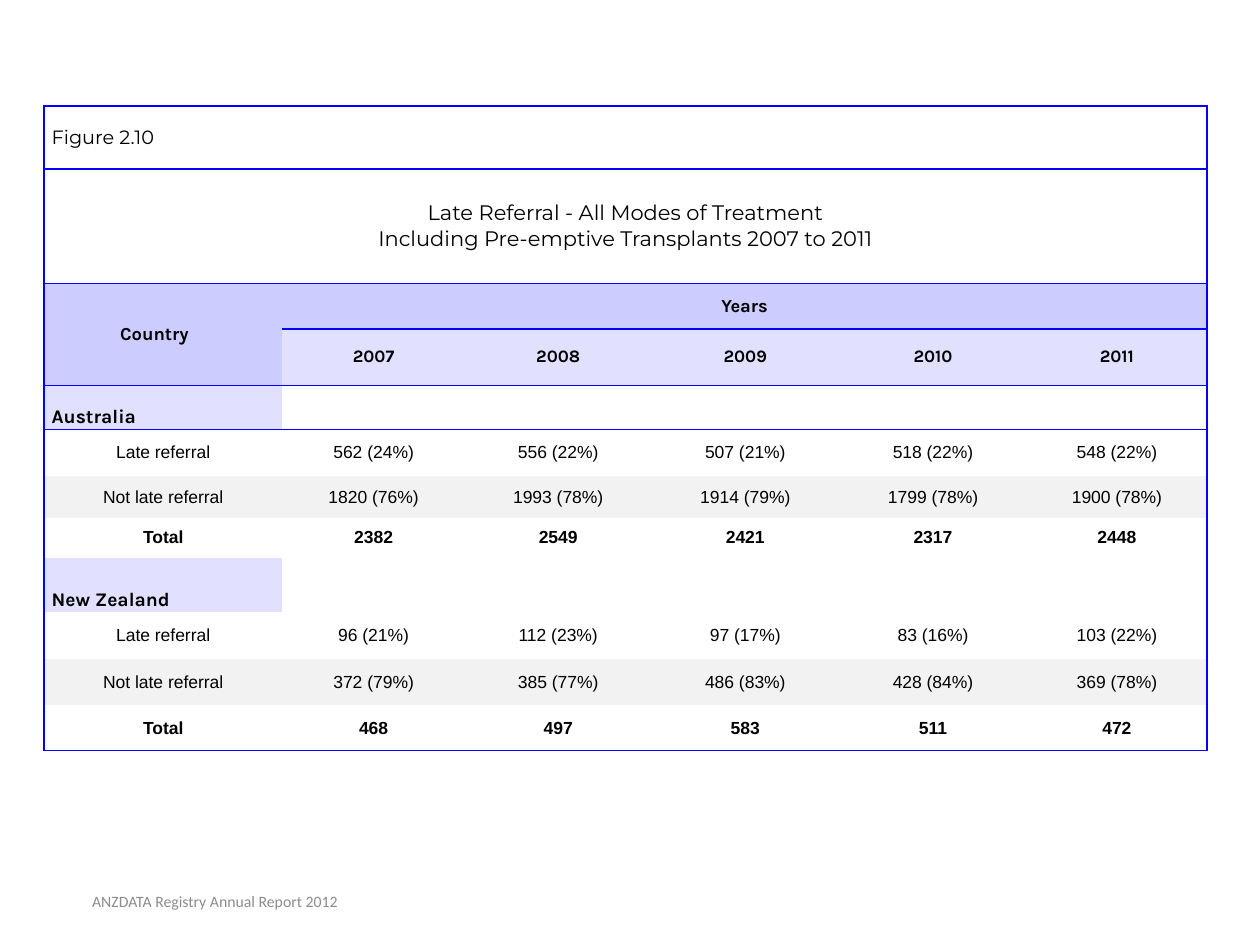
from lxml.etree import SubElement
from pptx import Presentation
from pptx.dml.color import RGBColor
from pptx.enum.text import MSO_ANCHOR as Anchor, PP_ALIGN as Align
from pptx.oxml.ns import qn
from pptx.util import Inches, Pt

COLORS = {
    "line": "0000FF", "text": "000000", "header": "CCCCFF",
    "subheader": "E1E1FF", "band": "F2F2F2", "footer": "8C8C8C",
}
COLUMN_WIDTHS = [1.89, 1.45, 1.48, 1.49, 1.49, 1.43]
ROW_HEIGHTS = [0.5, 0.91, 0.36, 0.45, 0.35, 0.37, 0.33, 0.32, 0.43, 0.37, 0.37, 0.36]
LAST_COLUMN, LAST_ROW = len(COLUMN_WIDTHS) - 1, len(ROW_HEIGHTS) - 1
RULED_ROWS = {0, 1, 2, 3, LAST_ROW}  # rows with a line below
NO_STYLE = "{2D5ABB26-0587-4C30-8999-92F81FD0307C}"

YEARS = ["2007", "2008", "2009", "2010", "2011"]
COUNTRIES = {
    "Australia": [
        ["Late referral", "562 (24%)", "556 (22%)", "507 (21%)", "518 (22%)", "548 (22%)"],
        ["Not late referral", "1820 (76%)", "1993 (78%)", "1914 (79%)", "1799 (78%)", "1900 (78%)"],
        ["Total", "2382", "2549", "2421", "2317", "2448"],
    ],
    "New Zealand": [
        ["Late referral", "96 (21%)", "112 (23%)", "97 (17%)", "83 (16%)", "103 (22%)"],
        ["Not late referral", "372 (79%)", "385 (77%)", "486 (83%)", "428 (84%)", "369 (78%)"],
        ["Total", "468", "497", "583", "511", "472"],
    ],
}


def write_text(frame, text, font="Arial", size=10, color="text", bold=False,
               align=Align.CENTER, space_after=None):
    for index, line in enumerate(text.split("\n")):
        paragraph = frame.add_paragraph() if index else frame.paragraphs[0]
        paragraph.alignment = align
        if space_after is not None:
            paragraph.space_after = Pt(space_after)
        run = paragraph.add_run()
        run.text = line
        run.font.name, run.font.size, run.font.bold = font, Pt(size), bold
        run.font.color.rgb = RGBColor.from_string(COLORS[color])


def fill_cell(cell, text="", fill=None, anchor=Anchor.MIDDLE, left=0.02, right=0.02, **style):
    cell.margin_left, cell.margin_right = Inches(left), Inches(right)
    cell.margin_top = cell.margin_bottom = Inches(0.01)
    cell.vertical_anchor = anchor
    if fill:
        cell.fill.solid()
        cell.fill.fore_color.rgb = RGBColor.from_string(COLORS[fill])
    else:
        cell.fill.background()
    if text:
        write_text(cell.text_frame, text, **style)


def draw_borders(table):
    for row in range(LAST_ROW + 1):
        for column in range(LAST_COLUMN + 1):
            cell = table.cell(row, column)
            if cell.is_spanned:
                bottom, right = row, column
            else:
                bottom = row + cell.span_height - 1
                right = column + cell.span_width - 1
            edges = {
                "a:lnL": column == 0,
                "a:lnR": right == LAST_COLUMN,
                "a:lnT": row == 0 or row - 1 in RULED_ROWS,
                "a:lnB": bottom in RULED_ROWS,
            }
            properties = cell._tc.get_or_add_tcPr()
            for tag in (tag for tag, ruled in edges.items() if ruled):
                line = SubElement(properties, qn(tag), w=str(Pt(1)))
                solid = SubElement(line, qn("a:solidFill"))
                SubElement(solid, qn("a:srgbClr"), val=COLORS["line"])


def add_referral_table(slide):
    frame = slide.shapes.add_table(
        LAST_ROW + 1, LAST_COLUMN + 1, Inches(0.35), Inches(0.84),
        Inches(sum(COLUMN_WIDTHS)), Inches(sum(ROW_HEIGHTS)))
    table = frame.table
    table.first_row = table.horz_banding = False
    table._tbl.tblPr.find(qn("a:tableStyleId")).text = NO_STYLE
    for column, width in zip(table.columns, COLUMN_WIDTHS):
        column.width = Inches(width)
    for row, height in zip(table.rows, ROW_HEIGHTS):
        row.height = Inches(height)

    # Merged cells: caption, title, country and years headings
    for first, last in [((0, 0), (0, LAST_COLUMN)), ((1, 0), (1, LAST_COLUMN)),
                        ((2, 0), (3, 0)), ((2, 1), (2, LAST_COLUMN))]:
        table.cell(*first).merge(table.cell(*last))
    draw_borders(table)

    # Caption, title and column headings
    fill_cell(table.cell(0, 0), "Figure 2.10", left=0.06, font="Montserrat", size=11,
              align=Align.LEFT)
    fill_cell(table.cell(1, 0),
              "Late Referral - All Modes of Treatment\n"
              "Including Pre-emptive Transplants 2007 to 2011",
              font="Montserrat", size=12)
    heading = {"font": "Karla", "bold": True}
    fill_cell(table.cell(2, 0), "Country", "header", right=0.16, size=10.5, **heading)
    fill_cell(table.cell(2, 1), "Years", "header", size=10.5, **heading)
    for column, year in enumerate(YEARS, 1):
        fill_cell(table.cell(3, column), year, "subheader", **heading)

    # One block per country: name row, then its figures
    row = 4
    for country, records in COUNTRIES.items():
        fill_cell(table.cell(row, 0), country, "subheader", Anchor.BOTTOM, left=0.06,
                  size=11, align=Align.LEFT, **heading)
        for column in range(1, LAST_COLUMN + 1):
            fill_cell(table.cell(row, column))
        for offset, record in enumerate(records, 1):
            fill = "band" if record[0] == "Not late referral" else None
            for column, value in enumerate(record):
                fill_cell(table.cell(row + offset, column), value, fill,
                          bold=record[0] == "Total", space_after=14)
        row += len(records) + 1


def add_footer(slide):
    box = slide.shapes.add_textbox(Inches(0.12), Inches(6.95), Inches(3.17), Inches(0.4))
    box.text_frame.word_wrap = True
    box.text_frame.vertical_anchor = Anchor.MIDDLE
    write_text(box.text_frame, "ANZDATA Registry Annual Report 2012",
               font="Calibri", size=9, color="footer")


def main():
    presentation = Presentation()
    presentation.slide_width, presentation.slide_height = Inches(10), Inches(7.5)
    slide = presentation.slides.add_slide(presentation.slide_layouts[6])
    add_referral_table(slide)
    add_footer(slide)
    presentation.save("out.pptx")


if __name__ == "__main__":
    main()
